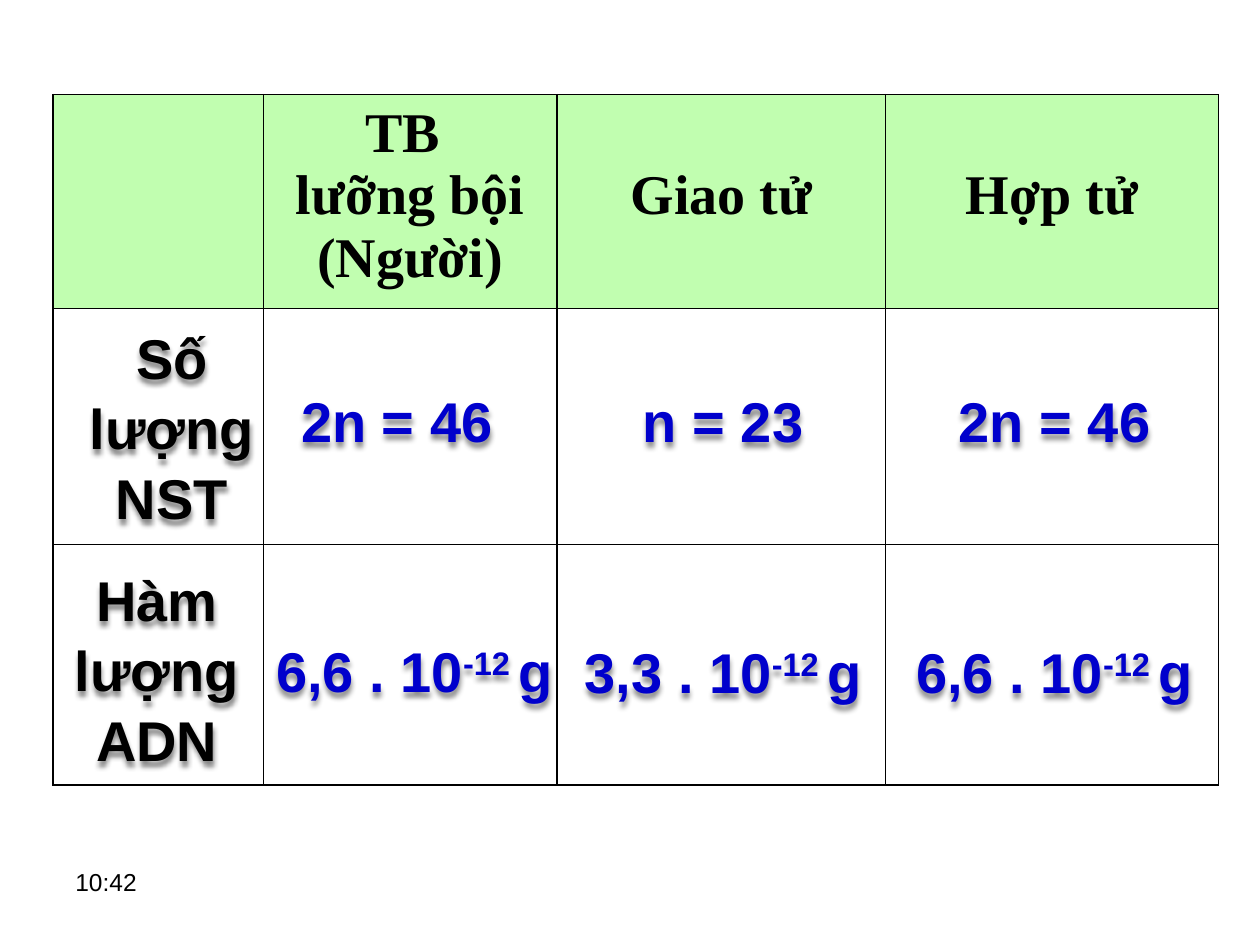
"""Builds a slide comparing chromosome number and DNA content by cell type."""
from lxml import etree
from pptx import Presentation
from pptx.dml.color import RGBColor
from pptx.enum import text
from pptx.oxml import parse_xml
from pptx.oxml.ns import nsdecls, qn
from pptx.util import Inches, Pt

BLACK, BLUE, GREEN = "000000", "0000CC", "C1FEB0"
COLUMNS = [1.67, 2.33, 2.61, 2.64]
ROWS = [1.7, 1.87, 1.91]
HEADERS = [[], ["TB ", "lưỡng bội", "(Người)"], ["Giao tử"], ["Hợp tử"]]
LABELS = [("Số lượng NST", 0.45, 2.5), ("Hàm lượng ADN", 0.33, 4.42)]
COUNTS = [("2n = 46", 1.86), ("n = 23", 4.45), ("2n = 46", 7.08)]
CONTENTS = [("6,6 . 10", 2, 4.98), ("3,3 . 10", 4.45, 4.99), ("6,6 . 10", 7.08, 4.99)]
EXPONENT, UNIT = "-12 ", "g"
VALUE_SIZE, LABEL_SIZE = (2.58, 1.35), (1.83, 2.42)
CLOCK = "10:42"


def rgb(value):
    return RGBColor.from_string(value)


def add_run(paragraph, words, color=BLACK, size=32, face="Arial", bold=True, raised=False):
    run = paragraph.add_run()
    run.text = words
    run.font.size, run.font.name, run.font.bold = Pt(size), face, bold
    run.font.color.rgb = rgb(color)
    if raised:
        run.font._element.set("baseline", "30000")


def add_box(slide, left, top, size):
    box = slide.shapes.add_textbox(*map(Inches, (left, top, *size)))
    box.text_frame.word_wrap = True
    return box


def add_shadowed(slide, left, top, size, color, words, exponent="", unit=""):
    box = add_box(slide, left, top, size)
    box._element.spPr.append(parse_xml(
        f'<a:effectLst {nsdecls("a")}><a:outerShdw blurRad="38100" dist="38100" dir="5400000">'
        '<a:srgbClr val="000000"><a:alpha val="45000"/></a:srgbClr></a:outerShdw></a:effectLst>'))
    line = box.text_frame.paragraphs[0]
    line.alignment, line.line_spacing = text.PP_ALIGN.CENTER, 1.04
    add_run(line, words, color)
    if exponent:
        add_run(line, exponent, color, raised=True)
        add_run(line, unit, color)


def add_borders(cell):
    properties = cell._tc.get_or_add_tcPr()
    for index, side in enumerate(("lnL", "lnR", "lnT", "lnB")):
        border = etree.Element(qn(f"a:{side}"), w=str(Pt(1)))
        fill = etree.SubElement(border, qn("a:solidFill"))
        etree.SubElement(fill, qn("a:srgbClr"), val=BLACK)
        properties.insert(index, border)


def add_grid(slide):
    frame = slide.shapes.add_table(len(ROWS), len(COLUMNS), Inches(0.42), Inches(0.75),
                                   Inches(sum(COLUMNS)), Inches(sum(ROWS)))
    grid = frame.table
    grid.first_row = grid.horz_banding = False
    for column, width in zip(grid.columns, COLUMNS):
        column.width = Inches(width)
    for row, height in zip(grid.rows, ROWS):
        row.height = Inches(height)
    for cell in grid.iter_cells():
        cell.fill.background()
        add_borders(cell)
    for cell, lines in zip(grid.rows[0].cells, HEADERS):
        cell.fill.solid()
        cell.fill.fore_color.rgb = rgb(GREEN)
        cell.vertical_anchor = text.MSO_ANCHOR.MIDDLE
        cell.margin_bottom = Inches(0.14)
        header = cell.text_frame.paragraphs[0]
        header.alignment = text.PP_ALIGN.CENTER
        for index, words in enumerate(lines):
            if index:
                header.add_line_break()
            add_run(header, words, face="Times New Roman")


def main():
    deck = Presentation()
    deck.slide_width, deck.slide_height = Inches(10), Inches(7.5)
    slide = deck.slides.add_slide(deck.slide_layouts[6])
    add_grid(slide)
    for words, left, top in CONTENTS:
        add_shadowed(slide, left, top, VALUE_SIZE, BLUE, words, EXPONENT, UNIT)
    for words, left in COUNTS:
        add_shadowed(slide, left, 3, VALUE_SIZE, BLUE, words)
    for words, left, top in LABELS:
        add_shadowed(slide, left, top, LABEL_SIZE, BLACK, words)
    clock = add_box(slide, 0.5, 6.83, (2.33, 0.52))
    add_run(clock.text_frame.paragraphs[0], CLOCK, size=14, bold=False)
    deck.save("out.pptx")


if __name__ == "__main__":
    main()
